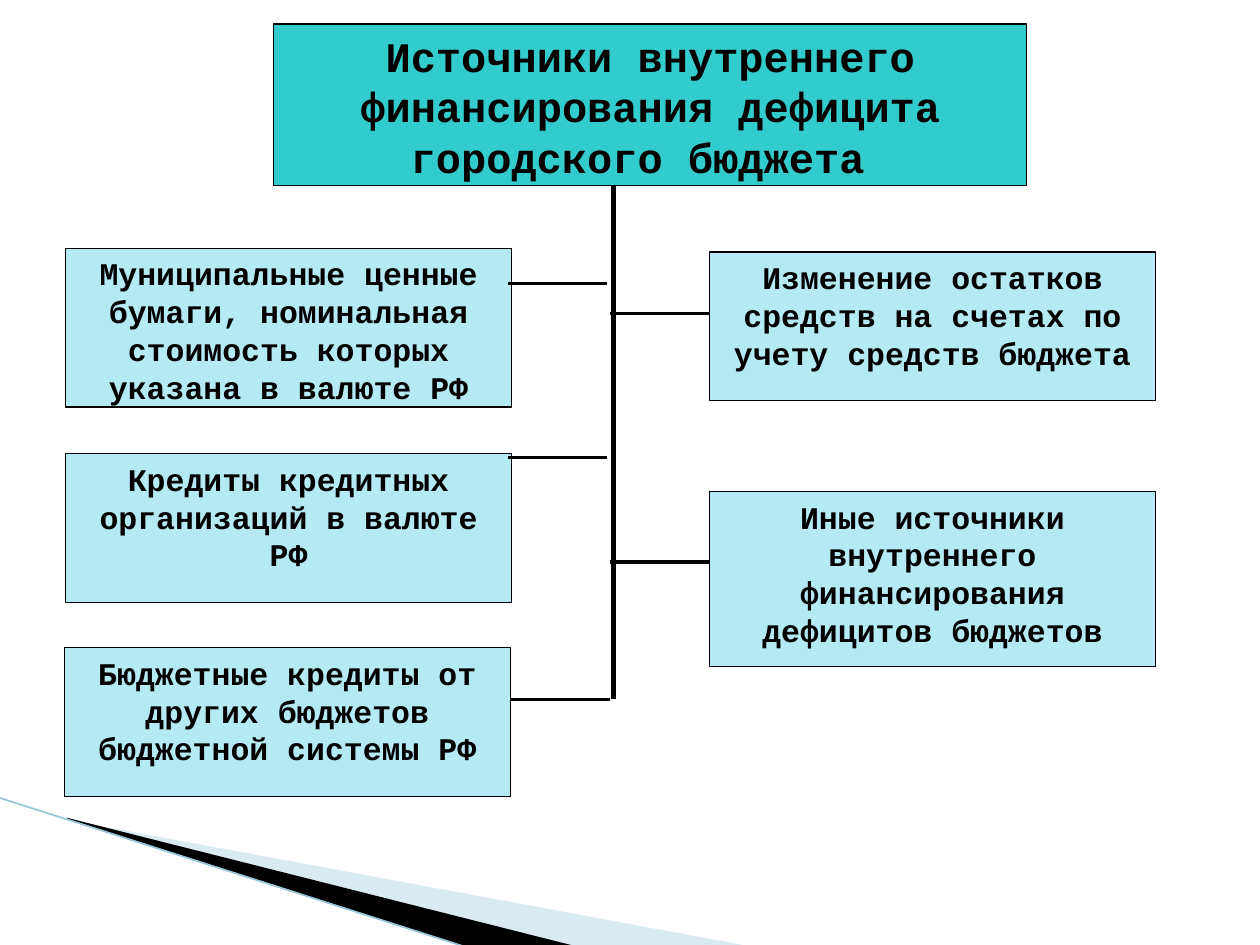
from pptx import Presentation
from pptx import util as u
from pptx.dml.color import RGBColor
from pptx.enum import shapes, text
from pptx.oxml.ns import qn
from lxml import etree

BLACK = "000000"
TITLE = "Источники внутреннего финансирования дефицита городского бюджета "
SOURCES = [
    (0.52, 1.97, 1.26, "Муниципальные ценные бумаги, номинальная стоимость которых указана в валюте РФ"),
    (0.52, 3.6, 1.18, "Кредиты кредитных организаций в валюте РФ"),
    (0.51, 5.14, 1.18, "Бюджетные кредиты от других бюджетов бюджетной системы РФ"),
    (5.63, 2, 1.18, "Изменение остатков средств на счетах по учету средств бюджета"),
    (5.63, 3.9, 1.39, "Иные источники внутреннего финансирования дефицитов бюджетов"),
]
BRANCHES = [(4.84, 5.55), (4.82, 3.63), (4.82, 2.25), (5.63, 2.49), (5.63, 4.46)]
BRANCH_LENGTH = 0.79


def paint(format_part, color):
    format_part.solid()
    format_part.fore_color.rgb = RGBColor.from_string(color)


def format_box(box, wording, size, color):
    paint(box.fill, color)
    paint(box.line.fill, BLACK)
    box.line.width = u.Pt(0.75)
    frame = box.text_frame
    frame.word_wrap = True
    frame.auto_size = text.MSO_AUTO_SIZE.NONE
    frame.vertical_anchor = text.MSO_ANCHOR.TOP
    frame.text = wording
    para = frame.paragraphs[0]
    para.alignment = text.PP_ALIGN.CENTER
    para.space_after = u.Pt(10)
    para.font.name = "Courier New"
    para.font.size = u.Pt(size)
    para.font.bold = True
    para.font.color.rgb = RGBColor.from_string(BLACK)


def add_title(page):
    box = page.shapes.title
    box.left, box.top = u.Inches(2.17), u.Inches(0.19)
    box.width, box.height = u.Inches(5.98), u.Inches(1.28)
    format_box(box, TITLE, 24, "33CCCC")


def add_source(page, left, top, height, wording):
    box = page.shapes.add_shape(
        shapes.MSO_SHAPE.RECTANGLE,
        u.Inches(left), u.Inches(top), u.Inches(3.54), u.Inches(height))
    box.shadow.inherit = False
    format_box(box, wording, 18, "B5E9F4")


def add_line(page, start, end, width, color=BLACK):
    line = page.shapes.add_connector(
        shapes.MSO_CONNECTOR.STRAIGHT, *map(u.Inches, start + end))
    paint(line.line.fill, color)
    line.line.width = u.Pt(width)
    etree.SubElement(line._element.spPr, qn("a:effectLst"))


def add_wedge(page, points, color, opacity=100):
    corners = [(u.Inches(x), u.Inches(y)) for x, y in points]
    builder = page.shapes.build_freeform(*corners[0])
    builder.add_line_segments(corners[1:])
    wedge = builder.convert_to_shape()
    wedge.shadow.inherit = False
    wedge.line.fill.background()
    paint(wedge.fill, color)
    if opacity < 100:
        tint = wedge.fill._xPr.find(qn("a:solidFill"))[0]
        etree.SubElement(tint, qn("a:alpha")).set("val", str(opacity * 1000))


def main():
    deck = Presentation()
    deck.slide_width, deck.slide_height = u.Inches(10), u.Inches(7.5)
    page = deck.slides.add_slide(deck.slide_layouts[5])
    add_wedge(page, [(0.55, 6.51), (5.95, 7.51), (4.56, 7.51), (0.55, 6.5)], "A0CBDC", 40)
    add_wedge(page, [(0.53, 6.49), (4.57, 7.51), (3.72, 7.52), (0.54, 6.5)], BLACK)
    add_line(page, (-0.01, 6.33), (3.71, 7.52), 0.95, "97C5D8")
    add_title(page)
    for source in SOURCES:
        add_source(page, *source)
    add_line(page, (4.87, 1.47), (4.87, 5.55), 3)
    for right, y in BRANCHES:
        add_line(page, (right, y), (right - BRANCH_LENGTH, y), 2)
    deck.save("out.pptx")


if __name__ == "__main__":
    main()
